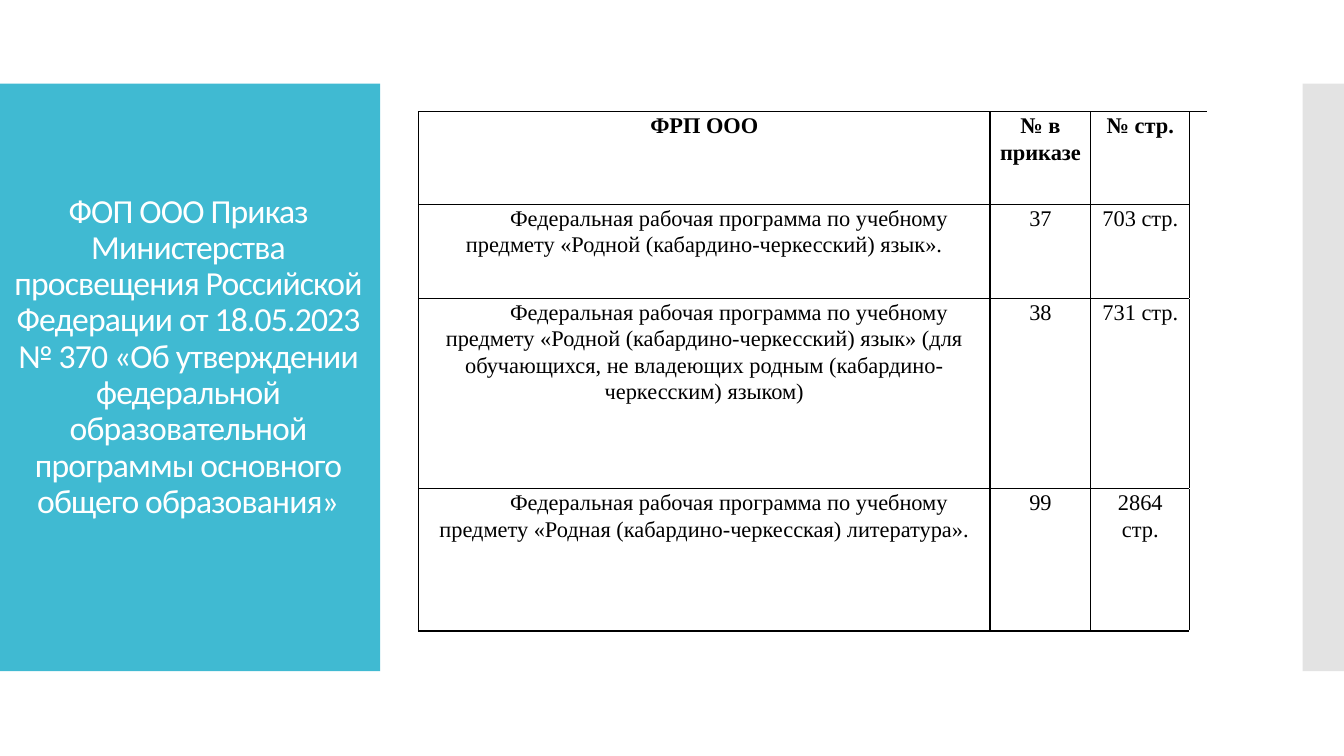
from lxml import etree
from pptx import Presentation
from pptx.dml.color import RGBColor
from pptx.enum import shapes, text
from pptx.oxml import ns
from pptx.util import Inches, Pt

TEAL = RGBColor(0x40, 0xBA, 0xD2)
GREY = RGBColor(0xC8, 0xC8, 0xC8)
WHITE = RGBColor(0xFF, 0xFF, 0xFF)
BLACK = RGBColor(0, 0, 0)

ORDER_TITLE = (
    "ФОП ООО Приказ Министерства просвещения Российской Федерации "
    "от 18.05.2023 № 370 «Об утверждении федеральной образовательной "
    "программы основного общего образования»\v"
)
PROGRAMME = "Федеральная рабочая программа по учебному предмету "
ROWS = [
    ("ФРП ООО", "№ в приказе", "№ стр."),
    (PROGRAMME + "«Родной (кабардино-черкесский) язык».", "37", "703 стр."),
    (PROGRAMME + "«Родной (кабардино-черкесский) язык» (для обучающихся, "
     "не владеющих родным (кабардино-черкесским) языком)", "38", "731 стр."),
    (PROGRAMME + "«Родная (кабардино-черкесская) литература».", "99", "2864 стр."),
]
COLUMN_WIDTHS = [5.67, 1, 0.98, 0.18]
ROW_HEIGHTS = [0.92, 0.93, 1.89, 1.41]


def add_band(slide, left, top, width, height, color):
    band = slide.shapes.add_shape(
        shapes.MSO_SHAPE.RECTANGLE,
        Inches(left), Inches(top), Inches(width), Inches(height))
    band.shadow.inherit = False
    band.fill.solid()
    band.fill.fore_color.rgb = color
    band.line.fill.background()
    return band


def set_transparency(shape, percent):
    color = shape.fill._xPr.find(".//" + ns.qn("a:srgbClr"))
    etree.SubElement(color, ns.qn("a:alpha"), val=str((100 - percent) * 1000))


def place_title(slide, left, top, width, height):
    title = slide.shapes.title
    slide.shapes._spTree.append(title._element)  # bring in front of the bands
    title.left, title.top = Inches(left), Inches(top)
    title.width, title.height = Inches(width), Inches(height)
    frame = title.text_frame
    frame.text = ORDER_TITLE
    frame.word_wrap = True
    frame.auto_size = text.MSO_AUTO_SIZE.NONE
    frame.vertical_anchor = text.MSO_ANCHOR.MIDDLE
    paragraph = frame.paragraphs[0]
    paragraph.alignment = text.PP_ALIGN.CENTER
    paragraph.line_spacing = 0.9
    paragraph.font.size = Pt(24)
    for run in paragraph.runs:
        run.font.name = "Calibri"
        run.font.size = Pt(24)
        run.font.color.rgb = WHITE
        run._r.get_or_add_rPr().set("spc", "-60")


def set_borders(cell, sides):
    """Draw 1 pt black lines on the sides given, a subsequence of 'LRTB'."""
    properties = cell._tc.get_or_add_tcPr()
    for position, side in enumerate(sides):
        line = etree.Element(ns.qn(f"a:ln{side}"), w=str(Pt(1)))
        fill = etree.SubElement(line, ns.qn("a:solidFill"))
        etree.SubElement(fill, ns.qn("a:srgbClr"), val=str(BLACK))
        properties.insert(position, line)


def fill_cell(cell, wording, bold, indented):
    cell.text = wording
    paragraph = cell.text_frame.paragraphs[0]
    paragraph.alignment = text.PP_ALIGN.CENTER
    paragraph.line_spacing = 1.07
    if indented:
        properties = paragraph._p.get_or_add_pPr()
        properties.set("marL", "0")
        properties.set("indent", str(Inches(0.49)))
    font = paragraph.runs[0].font
    font.name = "Times New Roman"
    font.size = Pt(16)
    font.bold = bold
    font.color.rgb = BLACK


def add_programme_table(slide, left, top):
    programmes = slide.shapes.add_table(
        len(ROW_HEIGHTS), len(COLUMN_WIDTHS), Inches(left), Inches(top),
        Inches(sum(COLUMN_WIDTHS)), Inches(sum(ROW_HEIGHTS))).table
    programmes.horz_banding = False
    for column, width in zip(programmes.columns, COLUMN_WIDTHS):
        column.width = Inches(width)
    for row, height in zip(programmes.rows, ROW_HEIGHTS):
        row.height = Inches(height)

    last = len(COLUMN_WIDTHS) - 1
    for r, wordings in enumerate(ROWS):
        for c in range(last + 1):
            cell = programmes.cell(r, c)
            cell.margin_left = cell.margin_right = Inches(0.07)
            cell.margin_top = cell.margin_bottom = 0
            cell.fill.background()
            if c < last:
                fill_cell(cell, wordings[c], bold=r == 0, indented=r > 0 and c == 0)
                set_borders(cell, "LRTB")
            else:
                set_borders(cell, "LT" if r == 0 else "L")
    programmes.cell(0, last).merge(programmes.cell(1, last))


def main():
    deck = Presentation()
    deck.slide_width, deck.slide_height = Inches(13.33), Inches(7.5)
    slide = deck.slides.add_slide(deck.slide_layouts[5])
    add_band(slide, 0, 0.83, 3.77, 5.83, TEAL)
    set_transparency(add_band(slide, 12.92, 0.83, 0.41, 5.83, GREY), 50)
    place_title(slide, 0, 1.23, 3.73, 5.03)
    add_programme_table(slide, 4.15, 1.11)
    deck.save("out.pptx")


if __name__ == "__main__":
    main()
